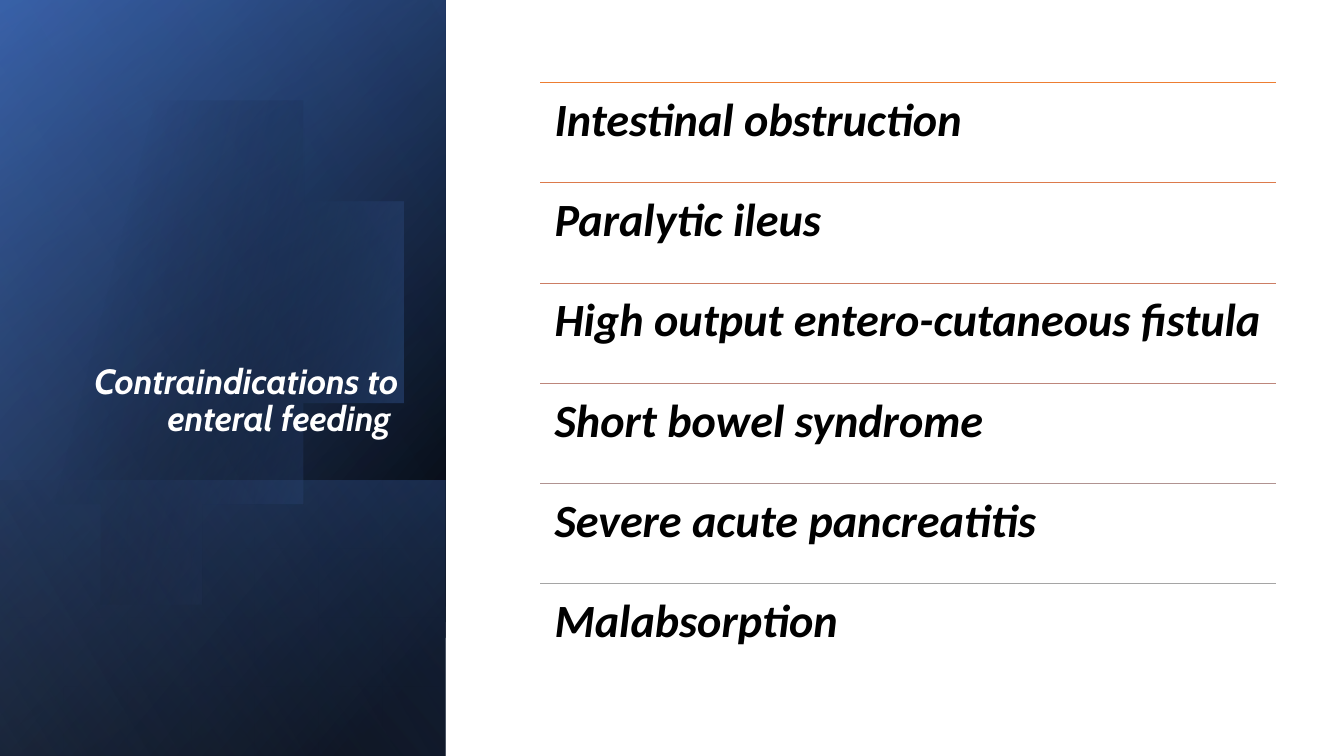
import math

from lxml import etree
from pptx import Presentation
from pptx import util as u
from pptx.dml.color import RGBColor
from pptx.enum import shapes, text
from pptx.oxml.ns import qn

SLIDE_W, SLIDE_H = 13.33, 7.5
PANEL_W = 4.42
BLACK = RGBColor(0x00, 0x00, 0x00)
WHITE = RGBColor(0xFF, 0xFF, 0xFF)
DEEP_BLUE = RGBColor(0x2F, 0x55, 0x97)
BLUE = RGBColor(0x44, 0x72, 0xC4)
PALE_BLUE = RGBColor(0x8F, 0xAA, 0xDC)

CONTRAINDICATIONS = [
    ("Intestinal obstruction", RGBColor(0xED, 0x7D, 0x31)),
    ("Paralytic ileus", RGBColor(0xDC, 0x7A, 0x4B)),
    ("High output entero-cutaneous fistula", RGBColor(0xCC, 0x7D, 0x64)),
    ("Short bowel syndrome", RGBColor(0xBD, 0x86, 0x7B)),
    ("Severe acute pancreatitis", RGBColor(0xB0, 0x93, 0x91)),
    ("Malabsorption", RGBColor(0xA5, 0xA5, 0xA5)),
]


def shade(shape, stops, angle):
    """Fill with a gradient of (position %, colour, opacity %) stops, angle clockwise."""
    shape.shadow.inherit = False
    shape.line.fill.background()
    shape.fill.gradient()
    shape.fill.gradient_angle = (360 - angle) % 360
    stop_list = shape._element.spPr.find(qn("a:gradFill")).find(qn("a:gsLst"))
    for old_stop in list(stop_list):
        stop_list.remove(old_stop)
    for position, colour, opacity in stops:
        stop = etree.SubElement(stop_list, qn("a:gs"), pos=str(position * 1000))
        tint = etree.SubElement(stop, qn("a:srgbClr"), val=str(colour))
        etree.SubElement(tint, qn("a:alpha"), val=str(opacity * 1000))


def write(frame, words, size, font, colour, align=text.PP_ALIGN.LEFT,
          anchor=text.MSO_ANCHOR.TOP, inset=0.1):
    frame.word_wrap = True
    frame.auto_size = text.MSO_AUTO_SIZE.NONE
    frame.vertical_anchor = anchor
    frame.margin_left = frame.margin_right = u.Inches(inset)
    frame.margin_top = frame.margin_bottom = u.Inches(inset)
    paragraph = frame.paragraphs[0]
    paragraph.alignment = align
    paragraph.line_spacing = 0.9
    run = paragraph.add_run()
    run.text = words
    run.font.name = font
    run.font.size = u.Pt(size)
    run.font.bold = run.font.italic = True
    run.font.color.rgb = colour


def add_band(slide, left, top, width, height, stops, angle):
    band = slide.shapes.add_shape(
        shapes.MSO_SHAPE.RECTANGLE, *map(u.Inches, (left, top, width, height)))
    shade(band, stops, angle)


def add_disc(slide, left, centre_x, centre_y, radius, stops, angle):
    """Circle cut off straight at the left edge of the panel."""
    reach = math.acos((left - centre_x) / radius)
    steps = 120
    turns = [reach * (2 * i / steps - 1) for i in range(steps + 1)]
    rim = [(centre_x + radius * math.cos(t), centre_y + radius * math.sin(t))
           for t in turns]
    outline = slide.shapes.build_freeform(*rim[0], scale=u.Inches(1))
    outline.add_line_segments(rim[1:], close=True)
    shade(outline.convert_to_shape(), stops, angle)


def add_title_panel(slide, left, top, width, height):
    panel = (left, top, width, height)
    add_band(slide, *panel, [(8, BLACK, 100), (100, DEEP_BLUE, 100)], 220)
    add_band(slide, *panel, [(0, BLACK, 0), (99, BLUE, 46)], 240)
    foot = 0.365 * height
    add_band(slide, left, top + height - foot, width, foot,
             [(2, BLUE, 29), (100, BLACK, 30)], 140)
    add_disc(slide, left, left + 1.43, top + 3.39, 2.3,
             [(29, BLACK, 0), (100, BLUE, 43)], 14)
    add_band(slide, *panel, [(0, BLACK, 0), (99, PALE_BLUE, 11)], 150)

    title = slide.shapes.title
    title.left, title.top = u.Inches(left + 0.64), u.Inches(top + 1.84)
    title.width, title.height = u.Inches(3.41), u.Inches(2.62)
    write(title.text_frame, "Contraindications to enteral feeding ", 25, "Cabin",
          WHITE, align=text.PP_ALIGN.RIGHT, anchor=text.MSO_ANCHOR.BOTTOM)
    slide.shapes._spTree.append(title._element)  # bring in front of the panel


def add_ruled_list(slide, left, top, width, height, entries):
    row_height = height / len(entries)
    for row, (words, colour) in enumerate(entries):
        y = top + row * row_height
        rule = slide.shapes.add_connector(
            shapes.MSO_CONNECTOR.STRAIGHT,
            *map(u.Inches, (left, y, left + width, y)))
        rule.line.color.rgb = colour
        rule.line.width = u.Pt(0.5)
        etree.SubElement(rule._element.spPr, qn("a:effectLst"))
        entry = slide.shapes.add_textbox(
            *map(u.Inches, (left, y, width, row_height)))
        write(entry.text_frame, words, 33, "Calibri", BLACK, inset=0.14)


def main():
    deck = Presentation()
    deck.slide_width, deck.slide_height = u.Inches(SLIDE_W), u.Inches(SLIDE_H)
    slide = deck.slides.add_slide(deck.slide_layouts.get_by_name("Title Only"))
    add_title_panel(slide, 0, 0, PANEL_W, SLIDE_H)
    add_ruled_list(slide, 5.36, 0.82, 7.3, 5.96, CONTRAINDICATIONS)
    deck.save("out.pptx")


if __name__ == "__main__":
    main()
